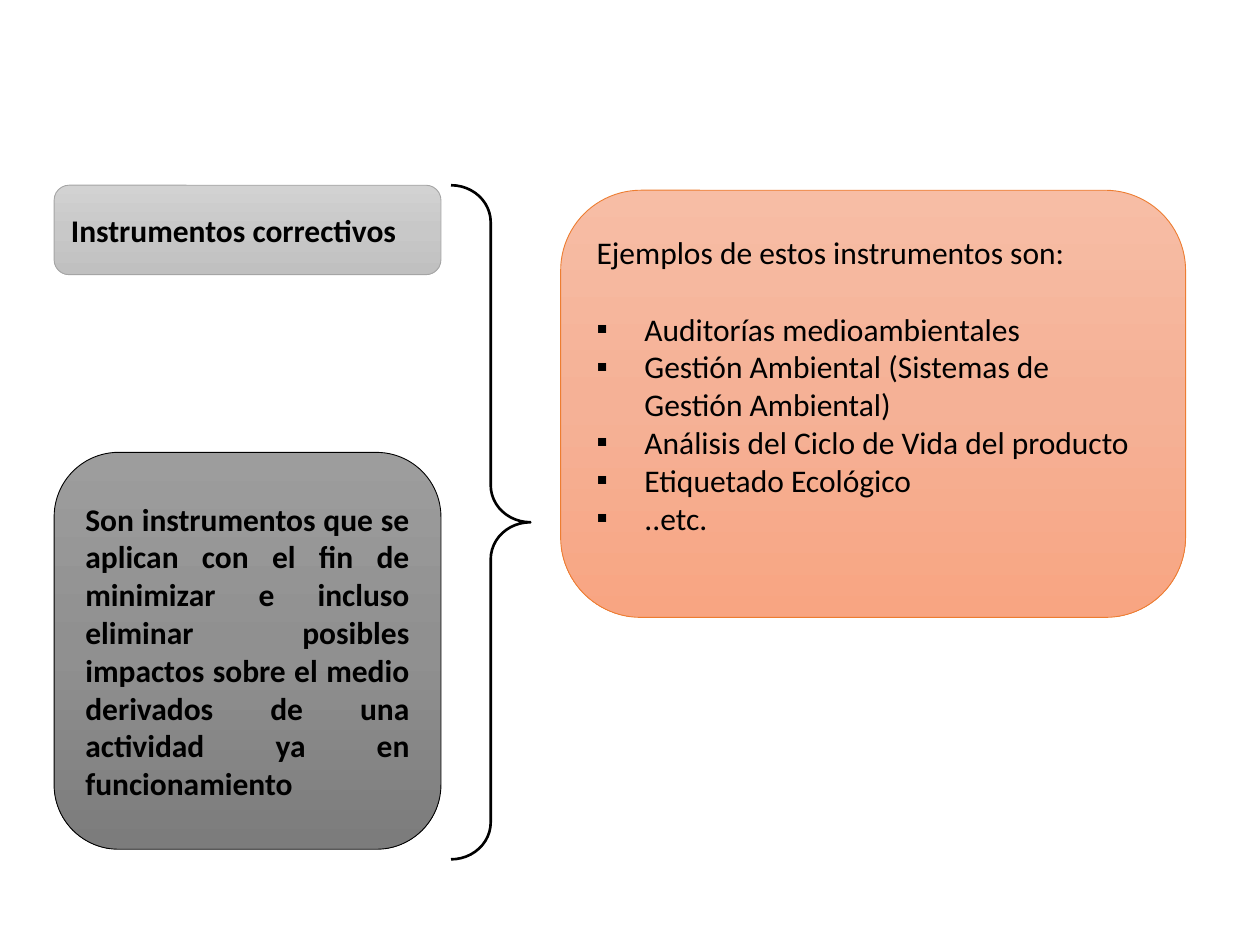
from copy import deepcopy

from lxml import etree
from pptx import Presentation
from pptx.dml.color import RGBColor
from pptx.enum.shapes import MSO_SHAPE
from pptx.enum.text import MSO_ANCHOR, PP_ALIGN
from pptx.oxml.ns import qn
from pptx.util import Inches, Pt

ROUND, BRACE = MSO_SHAPE.ROUNDED_RECTANGLE, MSO_SHAPE.RIGHT_BRACE
MIDDLE = MSO_ANCHOR.MIDDLE
LEFT, JUSTIFY = PP_ALIGN.LEFT, PP_ALIGN.JUSTIFY

BLACK = RGBColor(0x00, 0x00, 0x00)
SILVER = RGBColor(0xA5, 0xA5, 0xA5)
ORANGE = RGBColor(0xED, 0x7D, 0x31)
LIGHT = [RGBColor(0xD2, 0xD2, 0xD2), RGBColor(0xC8, 0xC8, 0xC8), RGBColor(0xC0, 0xC0, 0xC0)]
DARK = [RGBColor(0x9D, 0x9D, 0x9D), RGBColor(0x90, 0x90, 0x90), RGBColor(0x7C, 0x7C, 0x7C)]
PEACH = [RGBColor(0xF7, 0xBD, 0xA5), RGBColor(0xF5, 0xB1, 0x96), RGBColor(0xF8, 0xA5, 0x82)]

TITLE = "Instrumentos correctivos"
MEANING = ("Son instrumentos que se aplican con el fin de minimizar e incluso "
           "eliminar posibles impactos sobre el medio derivados de una "
           "actividad ya en funcionamiento")
INTRO = "Ejemplos de estos instrumentos son:"
ITEMS = ["Auditorías medioambientales",
         "Gestión Ambiental (Sistemas de Gestión Ambiental)",
         "Análisis del Ciclo de Vida del producto",
         "Etiquetado Ecológico",
         "..etc."]


class Painter:
    font = {"name": "Calibri", "size": Pt(18)}
    indent = Inches(0.38)

    def __init__(self, slide):
        self.slide = slide

    def shape(self, kind, place, line, width, adjust=()):
        item = self.slide.shapes.add_shape(kind, *map(Inches, place))
        item.shadow.inherit = False
        item.line.color.rgb = line
        item.line.width = Pt(width)
        for i, value in enumerate(adjust):
            item.adjustments[i] = value
        return item

    def box(self, place, shades, line, adjust=()):
        box = self.shape(ROUND, place, line, 0.5, adjust)
        box.fill.gradient()
        box.fill.gradient_angle = 270
        # A new gradient has two stops; add the third
        stops = box._element.spPr.find(qn("a:gradFill")).find(qn("a:gsLst"))
        stops.append(deepcopy(stops[-1]))
        for i, (stop, shade) in enumerate(zip(box.fill.gradient_stops, shades)):
            stop.position = i / 2
            stop.color.rgb = shade
        box.text_frame.word_wrap = True
        box.text_frame.vertical_anchor = MIDDLE
        return box.text_frame

    def text(self, para, words, bold=False, **style):
        run = para.add_run()
        run.text = words
        run.font.color.rgb = BLACK
        for key, value in {**self.font, "bold": bold}.items():
            setattr(run.font, key, value)
        for key, value in {"alignment": LEFT, **style}.items():
            setattr(para, key, value)

    def bullet(self, para, words):
        self.text(para, words)
        props = para._p.get_or_add_pPr()
        props.set("marL", str(self.indent))
        props.set("indent", str(-self.indent))
        etree.SubElement(props, qn("a:buFont"), typeface="Calibri")
        etree.SubElement(props, qn("a:buChar"), char="▪")


def main():
    deck = Presentation()
    deck.slide_width, deck.slide_height = Inches(10), Inches(7.5)
    pen = Painter(deck.slides.add_slide(deck.slide_layouts[6]))

    # Left column: name and meaning
    name = pen.box((0.43, 1.47, 3.07, 0.71), LIGHT, SILVER)
    pen.text(name.paragraphs[0], TITLE, bold=True)
    meaning = pen.box((0.43, 3.59, 3.07, 3.15), DARK, BLACK)
    pen.text(meaning.paragraphs[0], MEANING, bold=True, alignment=JUSTIFY)

    # Right column: examples, set a line above the middle
    list_box = pen.box((4.45, 1.51, 4.96, 3.39), PEACH, ORANGE, [0.188])
    list_box.margin_bottom = Inches(0.35)
    pen.text(list_box.paragraphs[0], INTRO, space_after=Pt(22))
    for item in ITEMS:
        pen.bullet(list_box.add_paragraph(), item)

    # Brace between the columns
    brace = pen.shape(BRACE, (3.58, 1.47, 0.63, 5.35), BLACK, 1.5, [0.466, 0.5])
    brace.fill.background()

    deck.save("out.pptx")


if __name__ == "__main__":
    main()
